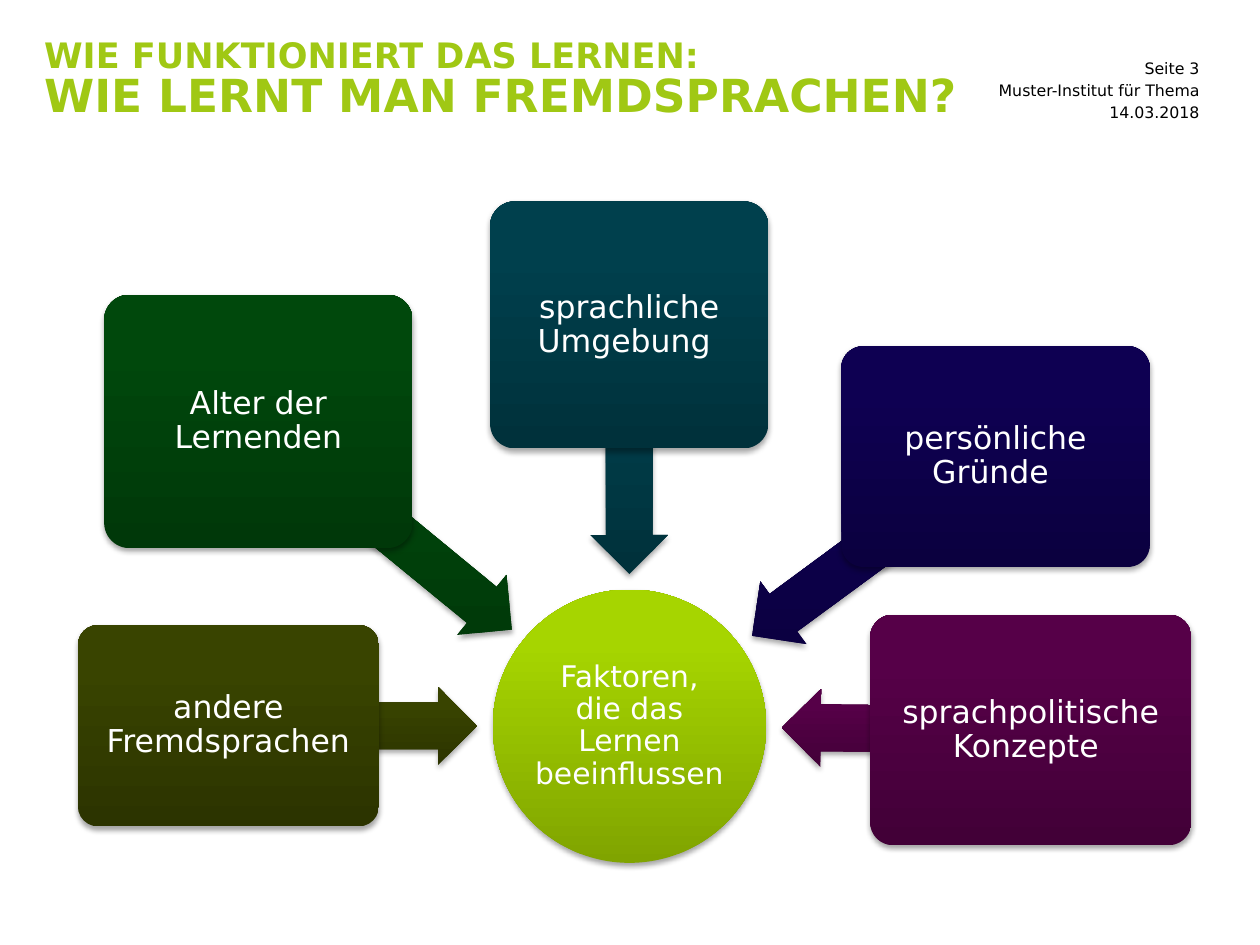
from math import atan2, cos, degrees, hypot, sin

from lxml.etree import SubElement
from pptx import Presentation
from pptx.dml.color import RGBColor
from pptx.enum.shapes import MSO_SHAPE as SHAPE
from pptx.enum.text import MSO_ANCHOR as ANCHOR, PP_ALIGN as ALIGN
from pptx.oxml.ns import qn
from pptx.util import Cm, Pt

FONT = "DejaVu Sans"
GREEN, WHITE, BLACK = "A0C814", "FFFFFF", "000000"
HUB_X, HUB_Y, HUB_SIZE = 12.69, 14.64, 5.51
ARROW_REACH, ARROW_WIDTH = 3.07, 1.57

FACTORS = [
    ("andere Fremdsprachen", (1.57, 12.6, 6.07, 4.06), "2C3400", "394400"),
    ("Alter der Lernenden", (2.1, 5.94, 6.22, 5.11), "003809", "00480C"),
    ("sprachliche Umgebung ", (9.88, 4.06, 5.61, 4.98), "00313B", "00404D"),
    ("persönliche Gründe ", (16.96, 6.98, 6.22, 4.45), "0B003F", "0E0052"),
    ("sprachpolitische Konzepte ", (17.54, 12.39, 6.48, 4.65), "420037", "560048"),
]
PAGE_INFO = ["Seite 3", "Muster-Institut für Thema", "14.03.2018"]


def rgb(value):
    """Return the colour for a hex string."""
    return RGBColor.from_string(value)


def write(sp, lines, color=WHITE, bold=False, align=ALIGN.CENTER,
          anchor=ANCHOR.MIDDLE, spacing=0.9, inset=0):
    """Fill a shape with one paragraph of (text, size) lines."""
    tf = sp.text_frame
    tf.word_wrap = True
    tf.vertical_anchor = anchor
    tf.margin_left = tf.margin_right = Cm(inset)
    tf.margin_top = tf.margin_bottom = Cm(inset)
    p = tf.paragraphs[0]
    p.alignment = align
    p.line_spacing = spacing
    for index, (text, size) in enumerate(lines):
        if index:
            p.add_line_break()
        r = p.add_run()
        r.text = text
        r.font.name = FONT
        r.font.size = Pt(size)
        r.font.bold = bold
        r.font.color.rgb = rgb(color)


def add_text(slide, box, lines, **fmt):
    """Add a text box."""
    write(slide.shapes.add_textbox(*map(Cm, box)), lines, **fmt)


def add_shadow(sp):
    """Give a shape a soft shadow below it."""
    sp.shadow.inherit = False
    effects = sp._element.spPr.find(qn("a:effectLst"))
    shadow = SubElement(effects, qn("a:outerShdw"), blurRad="40000",
                        dist="23000", dir="5400000", rotWithShape="0")
    color = SubElement(shadow, qn("a:srgbClr"), val=BLACK)
    SubElement(color, qn("a:alpha"), val="35000")


def add_shape(slide, kind, box, dark, light, adjustments=()):
    """Add a borderless shape shaded from dark at the bottom to light."""
    sp = slide.shapes.add_shape(kind, *map(Cm, box))
    for index, value in enumerate(adjustments):
        sp.adjustments[index] = value
    sp.line.fill.background()
    sp.fill.gradient()
    sp.fill.gradient_angle = 90
    stops = zip(sp.fill.gradient_stops, (dark, light), (0, 0.8))
    for stop, color, position in stops:
        stop.color.rgb = rgb(color)
        stop.position = position
    sp._element.spPr.find(qn("a:gradFill")).set("rotWithShape", "0")
    add_shadow(sp)
    return sp


def add_arrow(slide, x, y, dark, light):
    """Add a block arrow from a point towards the hub."""
    dx, dy = x - HUB_X, y - HUB_Y
    angle = atan2(dy, dx)
    length = hypot(dx, dy) - ARROW_REACH
    middle = ARROW_REACH + length / 2
    left = HUB_X + middle * cos(angle) - length / 2
    top = HUB_Y + middle * sin(angle) - ARROW_WIDTH / 2
    sp = add_shape(slide, SHAPE.LEFT_ARROW, (left, top, length, ARROW_WIDTH),
                   dark, light, (0.6, 0.5))
    sp.rotation = degrees(angle) % 360


def add_factor(slide, text, box, dark, light):
    """Add a factor box with its arrow behind it."""
    left, top, width, height = box
    add_arrow(slide, left + width / 2, top + height / 2, dark, light)
    sp = add_shape(slide, SHAPE.ROUNDED_RECTANGLE, box, dark, light, (0.1,))
    write(sp, [(text, 18)], inset=0.1)


def add_hub(slide):
    """Add the central circle."""
    box = (HUB_X - HUB_SIZE / 2, HUB_Y - HUB_SIZE / 2, HUB_SIZE, HUB_SIZE)
    sp = add_shape(slide, SHAPE.OVAL, box, "80A400", "A6D500")
    write(sp, [("Faktoren, die das Lernen beeinflussen", 17)], inset=0.02)


def main():
    """Build and save the slide."""
    prs = Presentation()
    prs.slide_width, prs.slide_height = Cm(25.4), Cm(19.05)
    slide = prs.slides.add_slide(prs.slide_layouts[6])
    add_text(slide, (0.89, 0.81, 19.3, 1.96),
             [("WIE FUNKTIONIERT DAS LERNEN: ", 20),
              ("WIE LERNT MAN FREMDSPRACHEN?", 26)],
             color=GREEN, bold=True, align=ALIGN.LEFT, anchor=ANCHOR.TOP,
             spacing=0.85)
    for row, text in enumerate(PAGE_INFO):
        add_text(slide, (18.59, 1.18 + 0.44 * row, 5.59, 0.41), [(text, 9)],
                 color=BLACK, align=ALIGN.RIGHT, spacing=1.0)
    add_hub(slide)
    for factor in FACTORS:
        add_factor(slide, *factor)
    prs.save("out.pptx")


if __name__ == "__main__":
    main()
